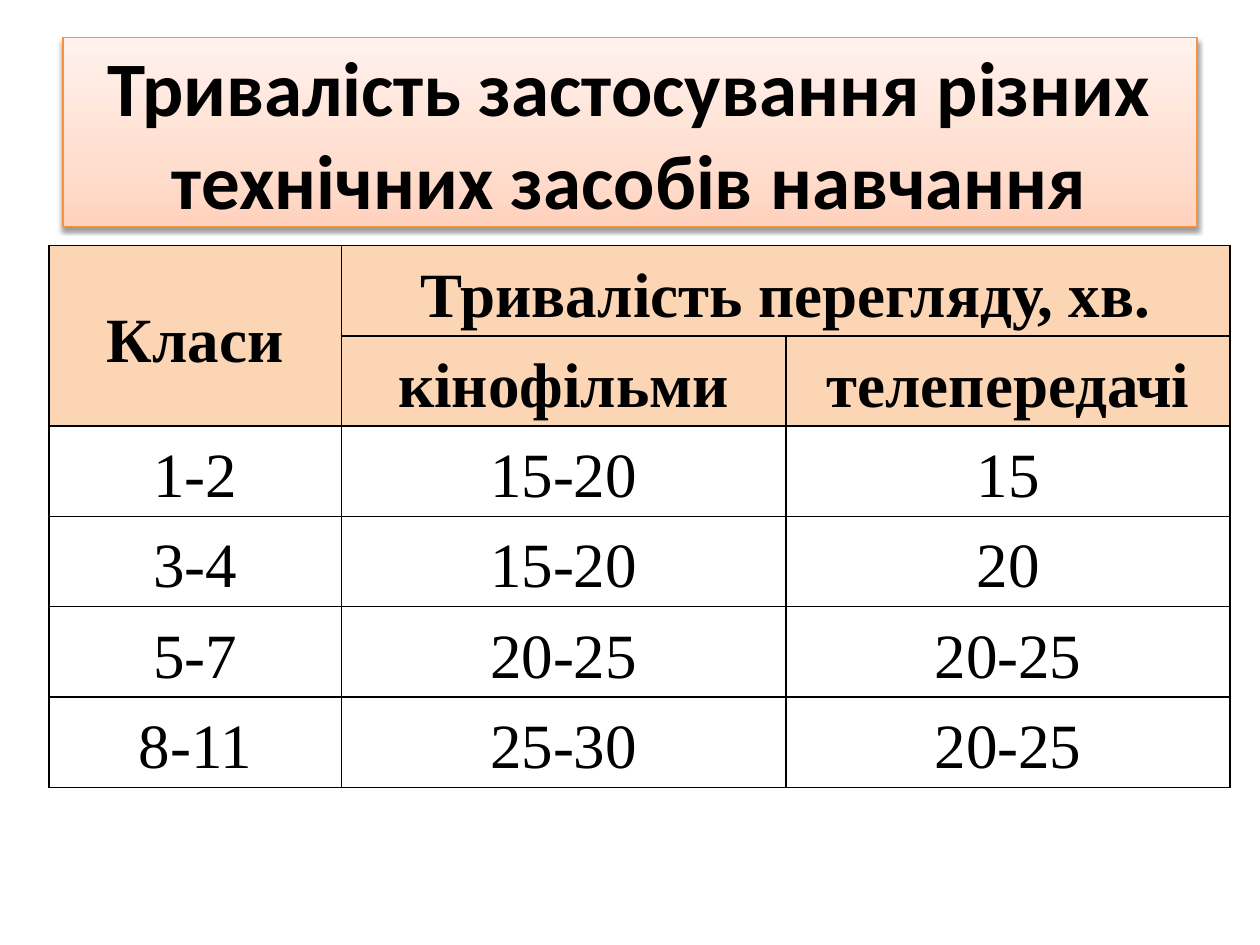
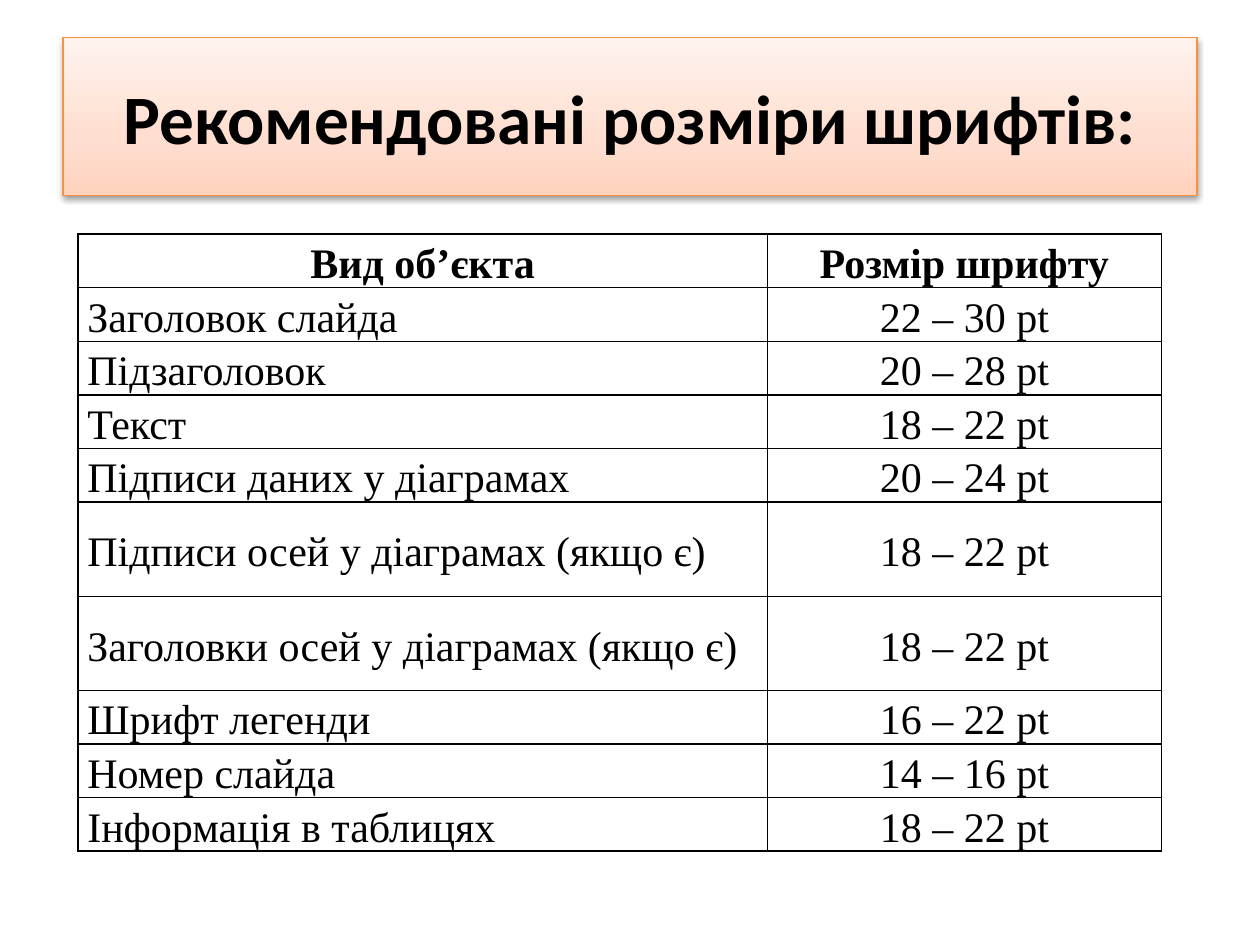
from lxml.etree import fromstring, SubElement
from pptx import Presentation
from pptx.dml.color import RGBColor
from pptx.enum.text import MSO_ANCHOR as Anchor, MSO_AUTO_SIZE as AutoSize, PP_ALIGN as Align
from pptx.oxml.ns import qn
from pptx.util import Cm, Pt

# Content: text, spans as (row, column, last row, last column), lengths in cm
SLIDES = [
    dict(
        title="Тривалість застосування різних технічних засобів навчання",
        title_size=44, title_height=3.81,
        rows=[
            ("Класи", "Тривалість перегляду, хв.", ""),
            ("", "кінофільми", "телепередачі"),
            ("1-2", "15-20", "15"),
            ("3-4", "15-20", "20"),
            ("5-7", "20-25", "20-25"),
            ("8-11", "25-30", "20-25"),
        ],
        spans=[(0, 0, 1, 0), (0, 1, 0, 2)],
        header_rows=2, header_filled=True, text_size=36,
        first_column=Align.CENTER,
        left=0.99, top=4.95, widths=(5.89, 8.96, 8.96),
        row_height=1.82, tall_rows={},
    ),
    dict(
        title="Рекомендовані розміри шрифтів:",
        title_size=39.6, title_height=3.18,
        rows=[
            ("Вид об’єкта", "Розмір шрифту"),
            ("Заголовок слайда", "22 – 30 pt"),
            ("Підзаголовок", "20 – 28 pt"),
            ("Текст", "18 – 22 pt"),
            ("Підписи даних у діаграмах", "20 – 24 pt"),
            ("Підписи осей у діаграмах (якщо є)", "18 – 22 pt"),
            ("Заголовки осей у діаграмах (якщо є)", "18 – 22 pt"),
            ("Шрифт легенди", "16 – 22 pt"),
            ("Номер слайда", "14 – 16 pt"),
            ("Інформація в таблицях", "18 – 22 pt"),
        ],
        spans=[], header_rows=1, header_filled=False, text_size=24,
        first_column=Align.JUSTIFY,
        left=1.57, top=4.72, widths=(13.9, 7.94),
        row_height=1.08, tall_rows={5: 1.9, 6: 1.9},
    ),
]

# Shared look
BLACK = RGBColor(0x00, 0x00, 0x00)
ORANGE = RGBColor(0xF6, 0x92, 0x40)
PEACH = RGBColor(0xFC, 0xD5, 0xB5)
TITLE_GRADIENT = [
    (0, RGBColor(0xFF, 0xD2, 0xBD)),
    (35, RGBColor(0xFF, 0xDE, 0xD0)),
    (100, RGBColor(0xFF, 0xF2, 0xED)),
]
TITLE_FONT, TABLE_FONT = "Calibri", "Times New Roman"
NS = 'xmlns:a="http://schemas.openxmlformats.org/drawingml/2006/main"'


def write(frame, text, *, size, font, bold=False, align=Align.CENTER, spacing=None):
    frame.text = text
    paragraph = frame.paragraphs[0]
    paragraph.alignment = align
    if spacing:
        paragraph.line_spacing = spacing
    style = paragraph.runs[0].font
    style.size, style.name, style.bold = Pt(size), font, bold
    style.color.rgb = BLACK


def add_title(slide, content):
    title = slide.shapes.title
    title.left, title.top = Cm(1.27), Cm(0.76)
    title.width, title.height = Cm(22.86), Cm(content["title_height"])
    # Gradient band with a thin outline and a soft shadow below
    stops = "".join(f'<a:gs pos="{pos * 1000}"><a:srgbClr val="{color}"/></a:gs>'
                    for pos, color in TITLE_GRADIENT)
    band = title.fill._xPr
    band.append(fromstring(f'<a:gradFill {NS} rotWithShape="1"><a:gsLst>{stops}</a:gsLst>'
                           '<a:lin ang="16200000" scaled="1"/></a:gradFill>'))
    title.line.color.rgb = ORANGE
    title.line.width = Pt(0.75)
    band.append(fromstring(
        f'<a:effectLst {NS}><a:outerShdw blurRad="{Pt(3.1)}" dist="{Pt(1.6)}" dir="5400000"'
        f' rotWithShape="0"><a:srgbClr val="{BLACK}"><a:alpha val="38000"/></a:srgbClr>'
        '</a:outerShdw></a:effectLst>'))
    frame = title.text_frame
    frame.word_wrap, frame.auto_size = True, AutoSize.NONE
    frame.vertical_anchor = Anchor.MIDDLE
    write(frame, content["title"], size=content["title_size"], font=TITLE_FONT, bold=True)


def format_cell(cell, fill):
    cell.margin_left = cell.margin_right = Cm(0.19)
    cell.margin_top = cell.margin_bottom = 0
    cell.vertical_anchor = Anchor.MIDDLE
    properties = cell._tc.get_or_add_tcPr()
    for side in ("lnL", "lnR", "lnT", "lnB"):
        border = SubElement(properties, qn(f"a:{side}"), w=str(Pt(1)))
        SubElement(SubElement(border, qn("a:solidFill")), qn("a:srgbClr"), val=str(BLACK))
    if fill:
        cell.fill.solid()
        cell.fill.fore_color.rgb = fill
    else:
        cell.fill.background()


def add_grid(slide, content):
    rows, widths = content["rows"], content["widths"]
    heights = [content["tall_rows"].get(r, content["row_height"]) for r in range(len(rows))]
    table = slide.shapes.add_table(
        len(rows), len(widths), Cm(content["left"]), Cm(content["top"]),
        Cm(sum(widths)), Cm(sum(heights))).table
    table.first_row = table.horz_banding = False
    for column, width in zip(table.columns, widths):
        column.width = Cm(width)
    for row, height in zip(table.rows, heights):
        row.height = Cm(height)
    for r, labels in enumerate(rows):
        header = r < content["header_rows"]
        for c, label in enumerate(labels):
            cell = table.cell(r, c)
            format_cell(cell, PEACH if header and content["header_filled"] else None)
            if label:
                align = content["first_column"] if c == 0 and not header else Align.CENTER
                write(cell.text_frame, label, size=content["text_size"], font=TABLE_FONT,
                      bold=header, align=align, spacing=1.15)
    for top, left, bottom, right in content["spans"]:
        table.cell(top, left).merge(table.cell(bottom, right))


def main():
    deck = Presentation()
    deck.slide_width, deck.slide_height = Cm(25.4), Cm(19.05)
    title_only = deck.slide_layouts[5]
    for content in SLIDES:
        slide = deck.slides.add_slide(title_only)
        add_title(slide, content)
        add_grid(slide, content)
    deck.save("out.pptx")


if __name__ == "__main__":
    main()
